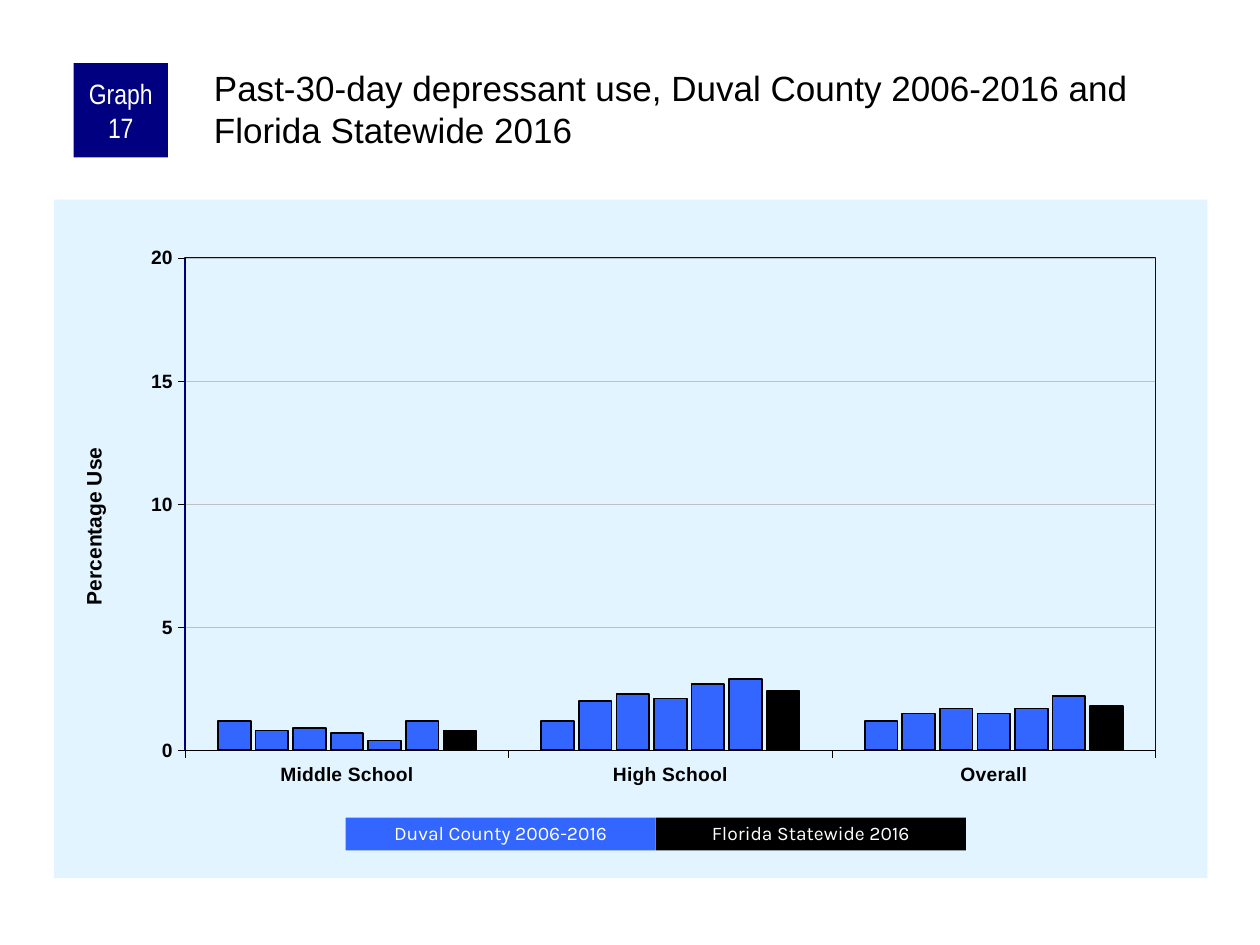
from lxml import etree
from pptx import Presentation
from pptx import util as u
from pptx.chart import data as chart_data
from pptx.dml.color import RGBColor
from pptx.enum import chart as charts, shapes, text
from pptx.oxml import ns

NAVY = RGBColor(0x00, 0x00, 0x80)
BLUE = RGBColor(0x33, 0x66, 0xFF)
PALE_BLUE = RGBColor(0xE1, 0xF4, 0xFF)
SILVER = RGBColor(0xC0, 0xC0, 0xC0)
BLACK = RGBColor(0x00, 0x00, 0x00)
WHITE = RGBColor(0xFF, 0xFF, 0xFF)

CATEGORIES = ["Middle School", "High School", "Overall"]
VALUES = [
    (1.2, 1.2, 1.2),
    (0.8, 2, 1.5),
    (0.9, 2.3, 1.7),
    (0.7, 2.1, 1.5),
    (0.4, 2.7, 1.7),
    (1.2, 2.9, 2.2),
    (0.8, 2.4, 1.8),
]


def set_values(target, values):
    for name, value in values.items():
        setattr(target, name, value)


def add_child(parent, tag, **attributes):
    child = etree.SubElement(parent, ns.qn(tag))
    for name, value in attributes.items():
        child.set(name, str(value))
    return child


def manual_layout(**settings):
    layout = etree.Element(ns.qn("c:layout"))
    manual = add_child(layout, "c:manualLayout")
    for name, value in settings.items():
        add_child(manual, f"c:{name}", val=value)
    return layout


def paint(parent, color):
    if color is None:
        add_child(parent, "a:noFill")
    else:
        add_child(add_child(parent, "a:solidFill"), "a:srgbClr", val=color)


def area_format(fill=None, line=None):
    properties = etree.Element(ns.qn("c:spPr"))
    paint(properties, fill)
    paint(add_child(properties, "a:ln", w=u.Pt(1)), line)
    return properties


class SlideBuilder:
    def __init__(self, slide):
        self.slide = slide
        self.font = "Arial"

    def place(self, shape, left, top, width, height):
        box = {"left": left, "top": top, "width": width, "height": height}
        set_values(shape, {name: u.Pt(value) for name, value in box.items()})

    def format_font(self, font, size, color=BLACK, bold=False, name=None):
        set_values(font, {"name": name or self.font, "size": u.Pt(size), "bold": bold})
        font.color.rgb = color

    def format_line(self, line, color, width):
        line.color.rgb = color
        line.width = u.Pt(width)

    def fill_text(self, frame, wording, alignment, anchor, margins, spacing=1, **font):
        sides = ("margin_left", "margin_top", "margin_right", "margin_bottom")
        set_values(frame, {side: u.Pt(value) for side, value in zip(sides, margins)})
        set_values(frame, {"word_wrap": True, "vertical_anchor": anchor,
                           "auto_size": text.MSO_AUTO_SIZE.NONE})
        paragraph = frame.paragraphs[0]
        set_values(paragraph, {"alignment": alignment, "line_spacing": spacing})
        run = paragraph.add_run()
        run.text = wording
        self.format_font(run.font, **font)

    def title(self, wording, box):
        shape = self.slide.shapes.title
        self.place(shape, *box)
        self.fill_text(shape.text_frame, wording, text.PP_ALIGN.LEFT,
                       text.MSO_ANCHOR.TOP, (2.25, 2.25, 0, 0), size=20)

    def label(self, wording, box, fill, margins=(7.2, 3.6, 7.2, 3.6), **style):
        shape = self.slide.shapes.add_shape(
            shapes.MSO_SHAPE.RECTANGLE, *(u.Pt(value) for value in box))
        shape.shadow.inherit = False
        shape.fill.solid()
        shape.fill.fore_color.rgb = fill
        shape.line.fill.background()
        self.fill_text(shape.text_frame, wording, text.PP_ALIGN.CENTER,
                       text.MSO_ANCHOR.MIDDLE, margins, color=WHITE, **style)

    def column_chart(self, box, categories, values, colors, axis_title):
        data = chart_data.CategoryChartData()
        data.categories = categories
        for number, row in enumerate(values, 1):
            data.add_series(f"Series {number}", row)
        chart = self.slide.shapes.add_chart(
            charts.XL_CHART_TYPE.COLUMN_CLUSTERED,
            *(u.Pt(value) for value in box), data).chart
        set_values(chart, {"has_legend": False, "has_title": False})
        self.format_font(chart.font, 8)

        plot = chart.plots[0]
        set_values(plot, {"gap_width": 200, "overlap": -15, "vary_by_categories": False})
        for series, color in zip(plot.series, colors):
            series.invert_if_negative = False
            series.format.fill.solid()
            series.format.fill.fore_color.rgb = color
            self.format_line(series.format.line, BLACK, 1)

        for axis in (chart.category_axis, chart.value_axis):
            set_values(axis, {"major_tick_mark": charts.XL_TICK_MARK.OUTSIDE,
                              "minor_tick_mark": charts.XL_TICK_MARK.NONE})
            self.format_font(axis.tick_labels.font, 11, bold=True)
            self.format_line(axis.format.line, BLACK, 0.25)
        axis = chart.value_axis
        set_values(axis, {"minimum_scale": 0, "maximum_scale": 20, "major_unit": 5,
                          "has_major_gridlines": True})
        self.format_line(axis.major_gridlines.format.line, SILVER, 0.25)
        self.axis_title(axis.axis_title, axis_title)
        self.chart_areas(chart)

    def axis_title(self, title, wording):
        run = title.text_frame.paragraphs[0].add_run()
        run.text = wording
        self.format_font(run.font, 12, bold=True)
        element = title._element
        body = element.find(".//" + ns.qn("a:bodyPr"))
        for name, value in {"rot": "-5400000", "vert": "horz"}.items():
            body.set(name, value)
        for layout in element.findall(ns.qn("c:layout")):
            element.remove(layout)
        element.find(ns.qn("c:tx")).addnext(
            manual_layout(xMode="edge", yMode="edge", x=0.02, y=0.36))

    def chart_areas(self, chart):
        chart_element = chart._chartSpace.find(ns.qn("c:chart"))
        chart_element.addnext(area_format(fill=PALE_BLUE))
        plot_area = chart_element.find(ns.qn("c:plotArea"))
        for layout in plot_area.findall(ns.qn("c:layout")):
            plot_area.remove(layout)
        plot_area.insert(0, manual_layout(
            layoutTarget="inner", xMode="edge", yMode="edge",
            x=0.114, y=0.086, w=0.841, h=0.726))
        plot_area.append(area_format(line=NAVY))


def main():
    presentation = Presentation()
    set_values(presentation, {"slide_width": u.Pt(720), "slide_height": u.Pt(540)})
    slide = presentation.slides.add_slide(presentation.slide_layouts[5])
    builder = SlideBuilder(slide)

    builder.title("Past-30-day depressant use, Duval County 2006-2016 and "
                  "Florida Statewide 2016", (120, 36, 570, 60))
    builder.column_chart((30.75, 114, 659.25, 387.75), CATEGORIES, VALUES,
                         [BLUE] * 6 + [BLACK], "Percentage Use")
    builder.label("Graph 17", (42, 36, 54, 54), NAVY, margins=(3.6, 0, 3.6, 0),
                  size=16, name="Arial Narrow")

    legend = [("Duval County 2006-2016", BLUE), ("Florida Statewide 2016", BLACK)]
    key_left, key_width = 197.5, 177.25
    for index, (wording, fill) in enumerate(legend):
        builder.label(wording, (key_left + index * key_width, 467.25, key_width, 18.75),
                      fill, spacing=0.9, size=11, name="Karla")

    presentation.save("out.pptx")


if __name__ == "__main__":
    main()
